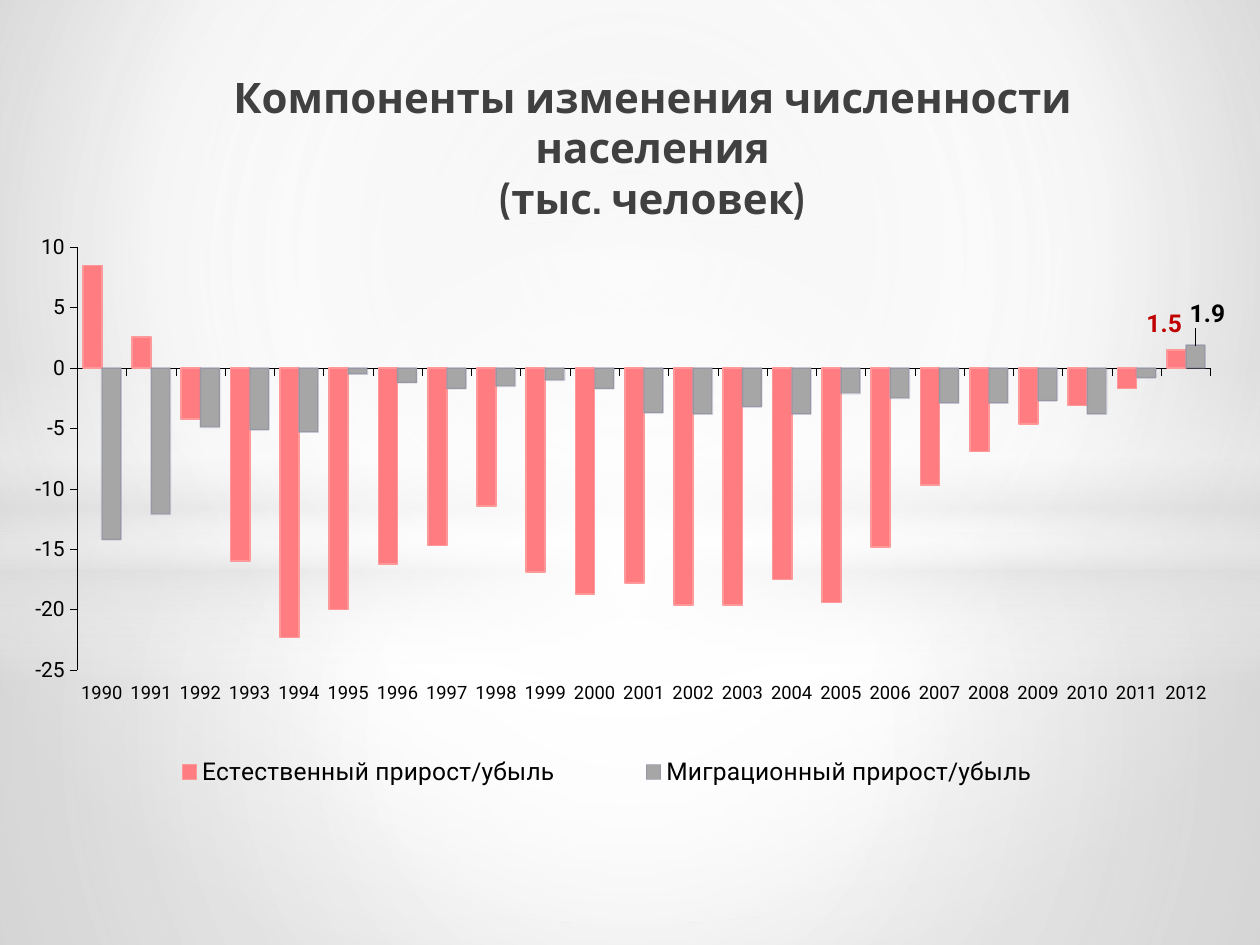
from dataclasses import dataclass
from typing import NamedTuple, Optional

from lxml import etree
from pptx import Presentation
from pptx import util as u
from pptx.chart import data as chart_data
from pptx.dml import color
from pptx.enum import chart as charts, shapes, text
from pptx.oxml import ns

WIDTH, HEIGHT = 10, 7.5


@dataclass(frozen=True)
class Theme:
    title_font: str = "Cabin"
    chart_font: str = "Roboto"
    title_size: float = 24
    legend_size: float = 14
    chart_size: float = 12
    year_size: float = 10.5
    title: str = "404040"
    ink: str = "000000"
    natural: str = "FF7C80"
    natural_line: str = "FF9999"
    natural_label: str = "C00000"
    migration: str = "A6A6A6"
    migration_line: str = "8588A2"
    light: str = "FFFFFF"
    shade: str = "DEDEDE"
    back_start: str = "D5D5D5"
    back_end: str = "B2B2B2"


THEME = Theme()


class Area(NamedTuple):
    left: float
    top: float
    width: float
    height: float

    def lengths(self) -> tuple:
        return (u.Inches(self.left * WIDTH), u.Inches(self.top * HEIGHT),
                u.Inches(self.width * WIDTH), u.Inches(self.height * HEIGHT))


class Stop(NamedTuple):
    place: int
    rgb: str
    opacity: int = 100


class Gradient(NamedTuple):
    stops: list[Stop]
    focus: Optional[tuple] = (50, 50, 50, 50)


class Glow(NamedTuple):
    kind: shapes.MSO_SHAPE
    area: Area
    gradient: Gradient


class Series(NamedTuple):
    name: str
    values: list[float]
    fill: str
    line: str
    line_opacity: int
    label: str
    label_shift: tuple[float, float]


L, S = THEME.light, THEME.shade
BACKDROP = Gradient([Stop(0, THEME.back_start), Stop(60, L), Stop(100, THEME.back_end)],
                    (20, 10, 20, 60))
GLOWS = [
    Glow(shapes.MSO_SHAPE.RECTANGLE, Area(0, 0.564, 1, 0.436),
         Gradient([Stop(0, L, 91), Stop(37, L, 76), Stop(100, S, 79)])),
    Glow(shapes.MSO_SHAPE.RECTANGLE, Area(0, 0, 1, 0.564),
         Gradient([Stop(0, L, 89), Stop(48, L, 62), Stop(100, S, 79)])),
    Glow(shapes.MSO_SHAPE.RECTANGLE, Area(0, 0.387, 1, 0.333),
         Gradient([Stop(0, L, 0), Stop(29, L, 30), Stop(45, S, 40), Stop(55, L, 26),
                   Stop(65, S, 60), Stop(100, L, 0)], None)),
    Glow(shapes.MSO_SHAPE.OVAL, Area(0, 0.233, 1, 0.744),
         Gradient([Stop(0, L), Stop(54, L, 0)])),
]
YEARS = [str(year) for year in range(1990, 2013)]
SERIES = [
    Series("Естественный прирост/убыль",
           [8.5, 2.6, -4.2, -16, -22.3, -20, -16.2, -14.7, -11.4, -16.9, -18.7, -17.8,
            -19.6, -19.6, -17.5, -19.4, -14.8, -9.7, -6.9, -4.6, -3.1, -1.7, 1.5],
           THEME.natural, THEME.natural_line, 100, THEME.natural_label, (-0.01, -0.01)),
    Series("Миграционный прирост/убыль",
           [-14.2, -12.1, -4.9, -5.1, -5.3, -0.5, -1.2, -1.7, -1.5, -1, -1.7, -3.7,
            -3.8, -3.2, -3.8, -2.1, -2.5, -2.9, -2.9, -2.7, -3.8, -0.8, 1.9],
           THEME.migration, THEME.migration_line, 44, THEME.ink, (0.01, -0.02)),
]


def rgb(value: str) -> color.RGBColor:
    return color.RGBColor.from_string(value)


def add(parent, tag: str, **attributes):
    return etree.SubElement(parent, ns.qn(tag), {k: str(v) for k, v in attributes.items()})


def paint(fill, owner, gradient: Gradient) -> None:
    fill.gradient()
    node = next(owner.iter(ns.qn("a:gradFill")))
    for child in list(node):
        node.remove(child)
    stops = add(node, "a:gsLst")
    for stop in gradient.stops:
        tint = add(add(stops, "a:gs", pos=stop.place * 1000), "a:srgbClr", val=stop.rgb)
        add(tint, "a:alpha", val=stop.opacity * 1000)
    if gradient.focus:
        sides = {side: share * 1000 for side, share in zip("ltrb", gradient.focus)}
        add(add(node, "a:path", path="circle"), "a:fillToRect", **sides)
    else:
        add(node, "a:lin", ang=90 * 60000, scaled=0)


def set_layout(parent, index: int, **values) -> None:
    for old in parent.findall(ns.qn("c:layout")):
        parent.remove(old)
    layout = etree.Element(ns.qn("c:layout"))
    manual = add(layout, "c:manualLayout")
    for tag, value in values.items():
        add(manual, f"c:{tag}", val=value)
    parent.insert(index, layout)


def style_font(font, name: str, size: float, ink: str, bold: bool = False) -> None:
    font.name, font.size, font.bold = name, u.Pt(size), bold
    font.color.rgb = rgb(ink)


def draw_glow(page, glow: Glow) -> None:
    shape = page.shapes.add_shape(glow.kind, *glow.area.lengths())
    shape.shadow.inherit = False
    shape.line.fill.background()
    paint(shape.fill, shape._element.spPr, glow.gradient)


def draw_title(page, area: Area) -> None:
    box = page.shapes.add_textbox(*area.lengths())
    frame = box.text_frame
    frame.word_wrap = True
    frame.vertical_anchor = text.MSO_ANCHOR.TOP
    para = frame.paragraphs[0]
    para.text = "Компоненты изменения численности населения\v(тыс. человек)"
    para.alignment = text.PP_ALIGN.CENTER
    para._p.get_or_add_pPr().set("marL", str(u.Inches(0.2)))
    for span in para.runs:
        style_font(span.font, THEME.title_font, THEME.title_size, THEME.title, True)


def style_axis(axis, size: float) -> None:
    axis.has_major_gridlines = False
    axis.major_tick_mark = charts.XL_TICK_MARK.OUTSIDE
    axis.minor_tick_mark = charts.XL_TICK_MARK.NONE
    axis.format.line.color.rgb = rgb(THEME.ink)
    axis.format.line.width = u.Pt(0.25)
    style_font(axis.tick_labels.font, THEME.chart_font, size, THEME.ink)


def style_series(bars, series: Series) -> None:
    bars.invert_if_negative = False
    bars.format.fill.solid()
    bars.format.fill.fore_color.rgb = rgb(series.fill)
    bars.format.line.color.rgb = rgb(series.line)
    bars.format.line.width = u.Pt(1)
    outline = bars._element.find(f".//{ns.qn('a:ln')}//{ns.qn('a:srgbClr')}")
    add(outline, "a:alpha", val=series.line_opacity * 1000)
    label = bars.points[len(YEARS) - 1].data_label
    style_font(label.font, THEME.chart_font, THEME.legend_size, series.label, True)
    label.position = charts.XL_LABEL_POSITION.OUTSIDE_END
    x, y = series.label_shift
    set_layout(bars._element.find(f".//{ns.qn('c:dLbl')}"), 1, x=x, y=y)


def draw_chart(page, area: Area) -> None:
    data = chart_data.CategoryChartData()
    data.categories = YEARS
    for series in SERIES:
        data.add_series(series.name, series.values)
    chart = page.shapes.add_chart(charts.XL_CHART_TYPE.COLUMN_CLUSTERED,
                                  *area.lengths(), data).chart
    chart.has_title = False
    style_font(chart.font, THEME.chart_font, THEME.chart_size, THEME.ink)
    style_axis(chart.category_axis, THEME.year_size)
    chart.category_axis.tick_label_position = charts.XL_TICK_LABEL_POSITION.LOW
    values = chart.value_axis
    style_axis(values, THEME.chart_size)
    values.minimum_scale, values.maximum_scale, values.major_unit = -25, 10, 5
    plot = chart.plots[0]
    plot.gap_width, plot.overlap, plot.vary_by_categories = 58, 0, False
    for bars, series in zip(plot.series, SERIES):
        style_series(bars, series)
    set_layout(plot._element.getparent(), 0, layoutTarget="inner", xMode="edge",
               yMode="edge", x=0.042, y=0.023, w=0.937, h=0.747)
    chart.has_legend = True
    chart.legend.position = charts.XL_LEGEND_POSITION.RIGHT
    chart.legend.include_in_layout = False
    style_font(chart.legend.font, THEME.chart_font, THEME.legend_size, THEME.ink)
    set_layout(chart.legend._element, 1, xMode="edge", yMode="edge",
               x=0.06, y=0.91, w=0.84, h=0.08)


def main() -> None:
    deck = Presentation()
    deck.slide_width, deck.slide_height = u.Inches(WIDTH), u.Inches(HEIGHT)
    page = deck.slides.add_slide(deck.slide_layouts[6])
    paint(page.background.fill, page._element, BACKDROP)
    for glow in GLOWS:
        draw_glow(page, glow)
    draw_title(page, Area(0.083, 0.069, 0.85, 0.215))
    draw_chart(page, Area(0.021, 0.248, 0.96, 0.599))
    deck.save("out.pptx")


if __name__ == "__main__":
    main()
